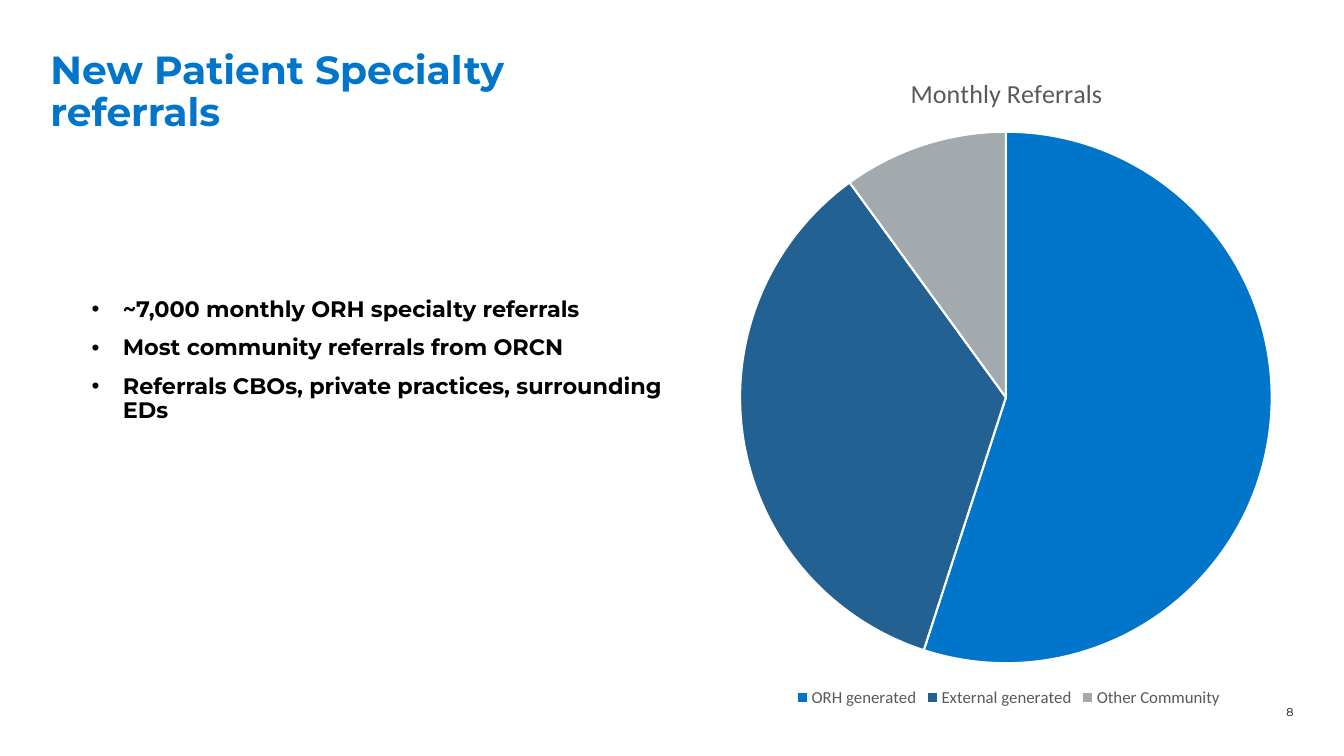
from lxml import etree
from pptx import Presentation
from pptx.chart.data import CategoryChartData as ChartData
from pptx.dml.color import RGBColor
from pptx.enum.chart import XL_CHART_TYPE as Kind, XL_LEGEND_POSITION as Place
from pptx.enum.text import MSO_ANCHOR as Anchor, PP_ALIGN as Align
from pptx.oxml import parse_xml
from pptx.oxml.ns import nsdecls, qn
from pptx.util import Inches, Pt

BLUE = RGBColor(0x00, 0x75, 0xC9)
NAVY = RGBColor(0x23, 0x61, 0x92)
SILVER = RGBColor(0xA2, 0xAA, 0xAD)
GREY = RGBColor(0x59, 0x59, 0x59)
BLACK = RGBColor(0, 0, 0)
WHITE = RGBColor(255, 255, 255)


def layout(**parts):
    """Fixed place for a chart part, in fractions of the chart."""
    rows = "".join(f'<c:{tag} val="{val}"/>' for tag, val in parts.items())
    return parse_xml(f'<c:layout {nsdecls("c")}><c:manualLayout>{rows}'
                     '</c:manualLayout></c:layout>')


class Deck:
    font = "Montserrat"
    chart_font = "Calibri"

    def __init__(self):
        self.prs = Presentation()
        self.prs.slide_width = Inches(13.33)
        self.prs.slide_height = Inches(7.5)
        self.slide = self.prs.slides.add_slide(self.prs.slide_layouts[5])

    def style(self, font, size, color, bold=False, name=None):
        font.name, font.size, font.bold = name or self.font, Pt(size), bold
        font.color.rgb = color

    def frame(self, shape, anchor=Anchor.TOP):
        frame = shape.text_frame
        frame.word_wrap = True
        frame.vertical_anchor = anchor
        frame.margin_left = frame.margin_right = 0
        frame.margin_top = frame.margin_bottom = 0
        return frame

    def run(self, para, text, size, color=BLACK, bold=False):
        run = para.add_run()
        run.text = text
        self.style(run.font, size, color, bold)

    def title(self, text, x, y, w, h):
        shape = self.slide.shapes.title
        shape.left, shape.top = Inches(x), Inches(y)
        shape.width, shape.height = Inches(w), Inches(h)
        para = self.frame(shape).paragraphs[0]
        para.alignment, para.line_spacing = Align.LEFT, 0.9
        self.run(para, text, 28, BLUE, True)

    def box(self, x, y, w, h, anchor=Anchor.TOP):
        shape = self.slide.shapes.add_textbox(
            Inches(x), Inches(y), Inches(w), Inches(h))
        return self.frame(shape, anchor)

    def label(self, text, size, x, y, w, h):
        para = self.box(x, y, w, h).paragraphs[0]
        para.alignment = Align.RIGHT
        self.run(para, text, size)

    def bullets(self, items, x, y, w, h):
        frame = self.box(x, y, w, h, Anchor.MIDDLE)
        for i, text in enumerate(items):
            para = frame.add_paragraph() if i else frame.paragraphs[0]
            para.line_spacing = 0.9
            para.space_before = Pt(10 if i else 0)
            props = para._p.get_or_add_pPr()
            props.set("marL", str(Inches(0.31)))
            props.set("indent", str(-Inches(0.31)))
            font = etree.SubElement(props, qn("a:buFont"))
            font.set("typeface", "Arial")
            etree.SubElement(props, qn("a:buChar")).set("char", "•")
            self.run(para, text, 16, bold=True)

    def pie(self, title, slices, x, y, w, h):
        data = ChartData()
        data.categories = [name for name, _, _ in slices]
        data.add_series("Series 1", [val for _, val, _ in slices])
        chart = self.slide.shapes.add_chart(
            Kind.PIE, Inches(x), Inches(y), Inches(w), Inches(h), data).chart
        self.style(chart.font, 10, BLACK, name=self.chart_font)

        # Chart title
        chart.has_title = True
        head = chart.chart_title
        run = head.text_frame.paragraphs[0].add_run()
        run.text = title
        self.style(run.font, 18.6, GREY, name=self.chart_font)
        head.include_in_layout = False
        for old in head._element.findall(qn("c:layout")):
            head._element.remove(old)
        head._element.find(qn("c:tx")).addnext(
            layout(xMode="edge", yMode="edge", x=0.32, y=0.03))

        # Legend
        chart.has_legend = True
        chart.legend.position = Place.BOTTOM
        chart.legend.include_in_layout = False
        self.style(chart.legend.font, 12, GREY, name=self.chart_font)

        # Slices
        plot = chart.plots[0]
        plot.vary_by_categories = True
        for i, (_, _, color) in enumerate(slices):
            form = plot.series[0].points[i].format
            form.fill.solid()
            form.fill.fore_color.rgb = color
            form.line.color.rgb = WHITE
            form.line.width = Pt(1.5)
        area = chart._chartSpace.chart.plotArea
        for old in area.findall(qn("c:layout")):
            area.remove(old)
        area.insert(0, layout(layoutTarget="inner", xMode="edge", yMode="edge",
                              x=0.03, y=0.12, w=0.93, h=0.81))


def main():
    deck = Deck()
    deck.title("New Patient Specialty referrals", 0.5, 0.5, 5.67, 0.82)

    # Referral facts
    deck.bullets(["~7,000 monthly ORH specialty referrals",
                  "Most community referrals from ORCN",
                  "Referrals CBOs, private practices, surrounding EDs"],
                 0.91, 1.2, 5.67, 4.76)

    # Referral sources
    deck.pie("Monthly Referrals",
             [("ORH generated", 55, BLUE),
              ("External generated", 35, NAVY),
              ("Other Community", 10, SILVER)],
             7.17, 0.5, 5.67, 6.56)

    # Page number
    deck.label("8", 8, 10.23, 7, 2.6, 0.13)
    deck.prs.save("out.pptx")


if __name__ == "__main__":
    main()
